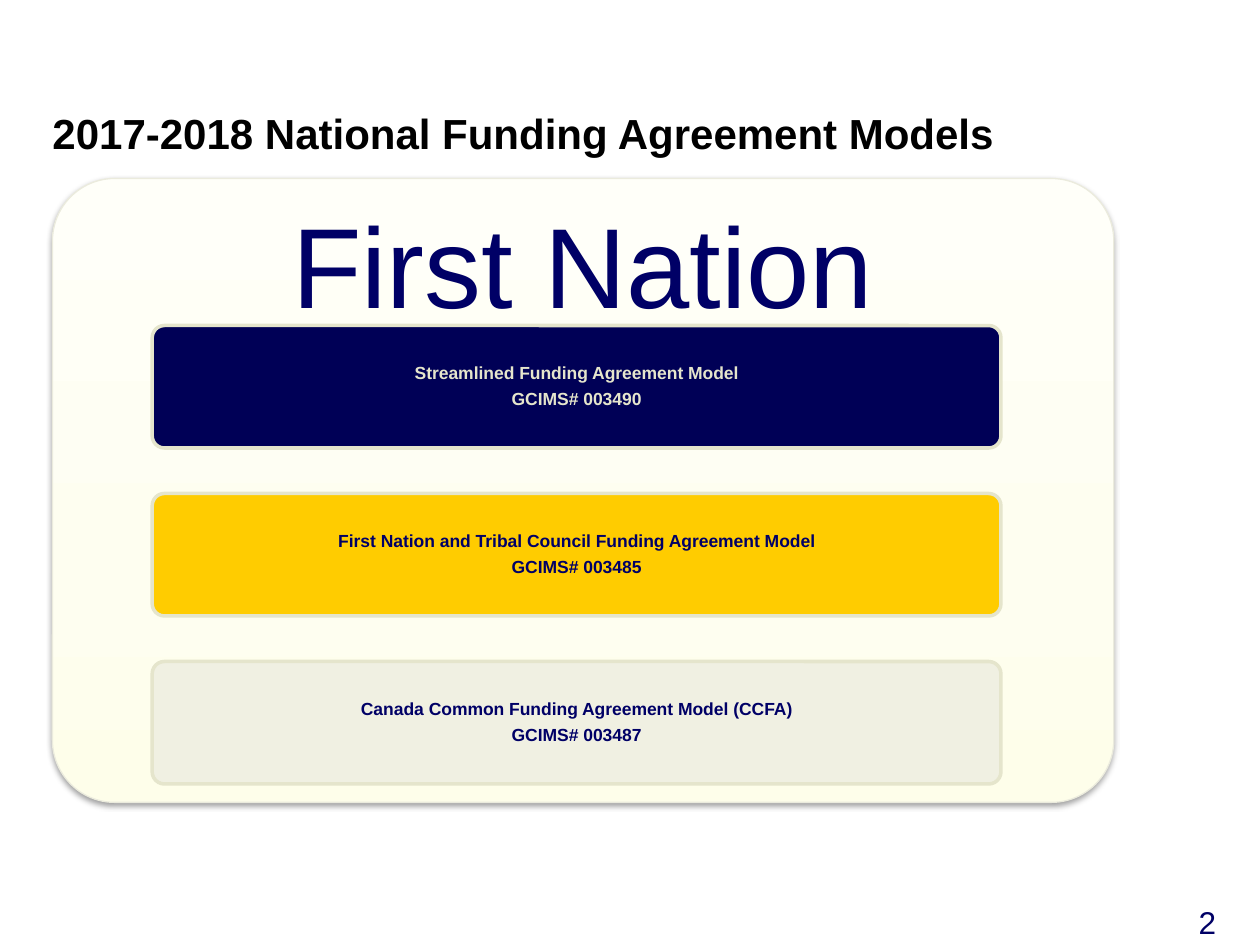
from copy import deepcopy
from dataclasses import dataclass

from pptx import Presentation
from pptx.dml.color import RGBColor as RGB
from pptx.enum.shapes import MSO_SHAPE as SHAPE
from pptx.enum.text import MSO_ANCHOR as ANCHOR, MSO_AUTO_SIZE as AUTO, PP_ALIGN as ALIGN
from pptx.oxml import parse_xml
from pptx.oxml.ns import nsdecls, qn
from pptx.util import Pt


@dataclass(frozen=True)
class Theme:
    """Colours, type sizes and font of the slide."""
    font: str = "Arial"
    black: str = "000000"
    navy: str = "000066"
    dark: str = "000056"
    gold: str = "FFCC00"
    pale: str = "F0F0E2"
    sand: str = "E5E5CC"
    edge: str = "EBEBDD"
    panel: tuple = ((0, "FEFEEA"), (0.35, "FEFEF0"), (1, "FFFFF9"))
    title: int = 24
    heading: int = 65
    label: int = 10
    number: int = 18


class Deck:
    """Hold the theme and the current slide, and draw its elements."""

    def __init__(self, theme):
        """Start a 10 by 7.5 inch deck with one title-only slide."""
        self.theme = theme
        self.prs = Presentation()
        self.prs.slide_width, self.prs.slide_height = Pt(720), Pt(540)
        self.s = self.prs.slides.add_slide(self.prs.slide_layouts[5])

    def set_text(self, sp, lines, size, color, bold=False, inset=(0, 0),
                 anchor=ANCHOR.TOP, **fmt):
        """Fill a shape with formatted paragraphs."""
        tf = sp.text_frame
        x, y = map(Pt, inset)
        frame = dict(word_wrap=True, auto_size=AUTO.NONE, vertical_anchor=anchor,
                     margin_left=x, margin_right=x, margin_top=y, margin_bottom=y)
        for name, value in frame.items():
            setattr(tf, name, value)
        tf.text = "\n".join(lines)
        for p in tf.paragraphs:
            for name, value in fmt.items():
                setattr(p, name, value)
            for r in p.runs:
                for name, value in dict(name=self.theme.font, size=Pt(size), bold=bold).items():
                    setattr(r.font, name, value)
                r.font.color.rgb = RGB.from_string(color)

    def title(self, text, box):
        """Place the title placeholder."""
        sp = self.s.shapes.title
        for name, value in zip(("left", "top", "width", "height"), box):
            setattr(sp, name, Pt(value))
        self.set_text(sp, [text], self.theme.title, self.theme.black, True,
                      alignment=ALIGN.LEFT, line_spacing=Pt(24))

    def text(self, lines, box, size, color, **fmt):
        """Add a centred text box."""
        sp = self.s.shapes.add_textbox(*map(Pt, box))
        self.set_text(sp, lines, size, color, alignment=ALIGN.CENTER, **fmt)

    def rounded(self, box, edge, width):
        """Add a rounded rectangle with an outline and no shadow."""
        sp = self.s.shapes.add_shape(SHAPE.ROUNDED_RECTANGLE, *map(Pt, box))
        sp.adjustments[0] = 0.1
        sp.shadow.inherit = False
        sp.line.color.rgb = RGB.from_string(edge)
        sp.line.width = Pt(width)
        return sp

    def panel(self, box):
        """Add the shaded panel with its soft shadow."""
        sp = self.rounded(box, self.theme.edge, 0.75)
        sp.fill.gradient()
        sp.fill.gradient_angle = 90
        stops = sp.element.spPr.find(".//" + qn("a:gsLst"))
        stops.append(deepcopy(stops[0]))
        for stop, (position, color) in zip(sp.fill.gradient_stops, self.theme.panel):
            stop.position = position
            stop.color.rgb = RGB.from_string(color)
        sp.element.spPr.find(qn("a:effectLst")).append(parse_xml(
            f'<a:outerShdw {nsdecls("a")} blurRad="{Pt(3.1)}" dist="{Pt(1.6)}" '
            'dir="5400000" rotWithShape="0"><a:srgbClr val="000000">'
            '<a:alpha val="38000"/></a:srgbClr></a:outerShdw>'))

    def bar(self, lines, box, fill, color):
        """Add a filled bar with centred bold lines."""
        sp = self.rounded(box, self.theme.sand, 2)
        sp.fill.solid()
        sp.fill.fore_color.rgb = RGB.from_string(fill)
        self.set_text(sp, lines, self.theme.label, color, True, (4, 3), ANCHOR.MIDDLE,
                      alignment=ALIGN.CENTER, line_spacing=0.9, space_after=Pt(4))


def main():
    """Build and save the slide."""
    theme = Theme()
    deck = Deck(theme)
    deck.title("2017-2018 National Funding Agreement Models", (30, 66, 618, 24))
    deck.panel((30, 102, 606.5, 356.5))
    deck.text(["First Nation"], (30, 102, 606.5, 106.5), theme.heading, theme.navy,
              inset=(19.5, 19.5), anchor=ANCHOR.MIDDLE, line_spacing=0.9)
    models = (
        ("Streamlined Funding Agreement Model", "003490", theme.dark, theme.sand),
        ("First Nation and Tribal Council Funding Agreement Model", "003485",
         theme.gold, theme.navy),
        ("Canada Common Funding Agreement Model (CCFA)", "003487", theme.pale, theme.navy),
    )
    for i, (name, number, fill, color) in enumerate(models):
        deck.bar([name, f"GCIMS# {number}"], (87, 186 + 96 * i, 485, 70), fill, color)
    deck.text(["2"], (660, 512.5, 60, 24), theme.number, theme.navy, inset=(7.2, 3.6))
    deck.prs.save("out.pptx")


if __name__ == "__main__":
    main()
